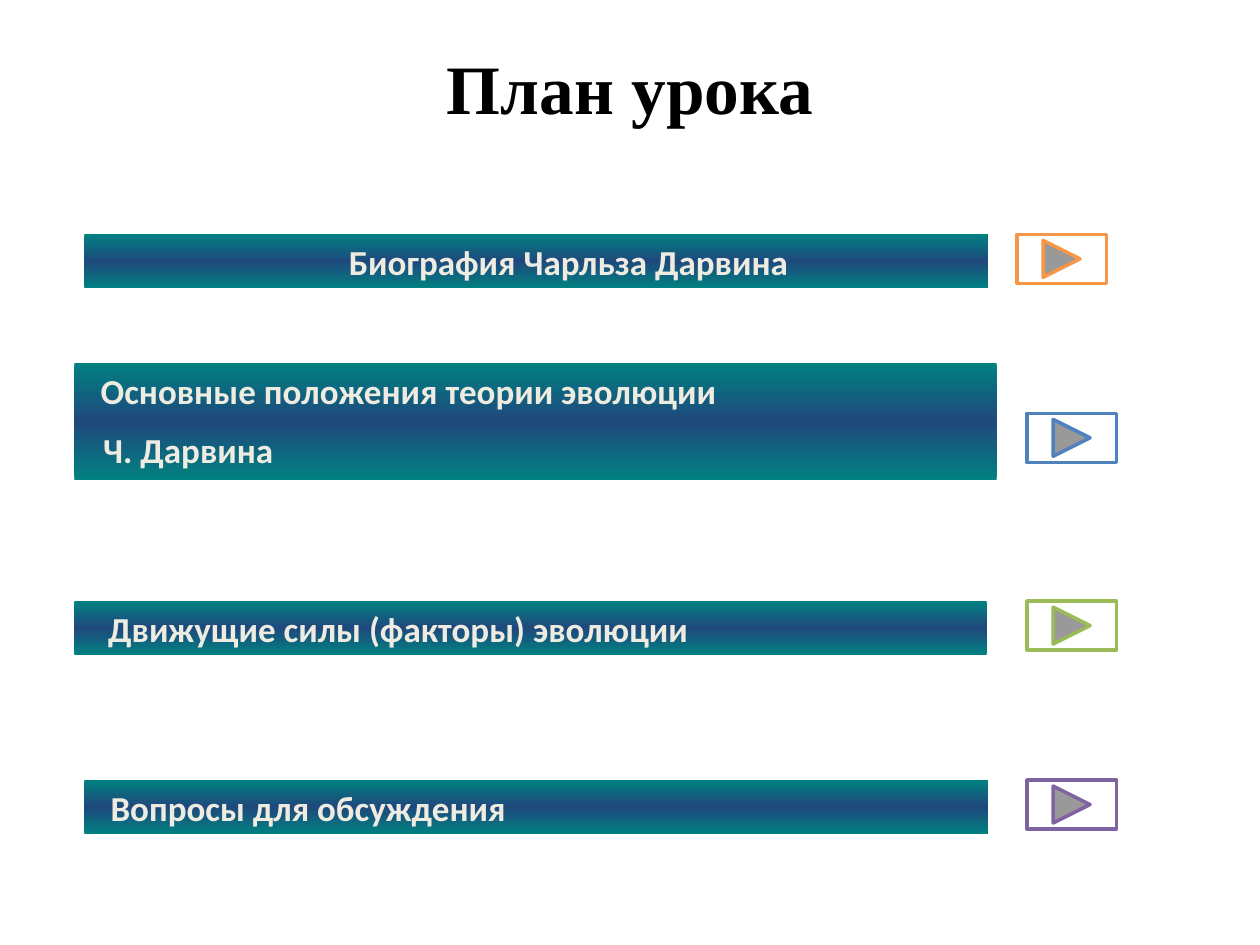
import copy
from dataclasses import dataclass

import pptx
import pptx.dml.color
import pptx.enum.shapes
import pptx.enum.text
import pptx.util
from pptx.util import Inches

ALIGN = pptx.enum.text.PP_ALIGN
ANCHOR = pptx.enum.text.MSO_ANCHOR
SHAPE = pptx.enum.shapes.MSO_SHAPE


@dataclass(frozen=True)
class Theme:
    title_font: str = "Times New Roman"
    body_font: str = "Calibri"
    title_size: float = 39.6
    body_size: float = 20
    title_color: str = "000000"
    body_color: str = "EEECE1"
    bar_edge: str = "008080"
    bar_middle: str = "1F497D"
    button_fill: str = "FFFFFF"


@dataclass(frozen=True)
class PlanItem:
    lines: tuple[str, ...]
    indents: tuple[float, ...]
    left: float
    top: float
    width: float
    height: float
    button_left: float
    button_top: float
    button_color: str


THEME = Theme()
BUTTON_WIDTH, BUTTON_HEIGHT = 0.71, 0.39

PLAN = (
    PlanItem(("Биография Чарльза Дарвина",), (2,),
             0.67, 1.86, 7.17, 0.43, 8.07, 1.86, "F79646"),
    PlanItem(("Основные положения теории эволюции", "Ч. Дарвина"), (0.11, 0.13),
             0.59, 2.88, 7.32, 0.93, 8.15, 3.28, "4F81BD"),
    PlanItem(("Движущие силы (факторы) эволюции",), (0.17,),
             0.59, 4.77, 7.24, 0.43, 8.15, 4.77, "9BBB59"),
    PlanItem(("Вопросы для обсуждения",), (0.11,),
             0.67, 6.19, 7.17, 0.43, 8.15, 6.19, "8064A2"),
)


def rgb(value: str) -> pptx.dml.color.RGBColor:
    return pptx.dml.color.RGBColor.from_string(value)


def write_text(paragraph, text: str, *, font: str, size: float, color: str,
               align=ALIGN.LEFT, indent: float = 0, space_before: float = 0) -> None:
    """Write one bold paragraph with its format."""
    properties = paragraph._p.get_or_add_pPr()
    properties.set("marL", str(Inches(indent)))
    properties.set("indent", "0")
    paragraph.alignment = align
    paragraph.space_before = pptx.util.Pt(space_before)
    run = paragraph.add_run()
    run.text = text
    run.font.name = font
    run.font.size = pptx.util.Pt(size)
    run.font.bold = True
    run.font.color.rgb = rgb(color)


def fill_bar(shape) -> None:
    """Fill with a vertical gradient: edge, middle, edge."""
    shape.fill.gradient()
    shape.fill.gradient_angle = 270
    stop_list = shape.fill._fill._gradFill.gsLst
    stop_list.append(copy.deepcopy(stop_list[-1]))
    colors = (THEME.bar_edge, THEME.bar_middle, THEME.bar_edge)
    for stop, color, position in zip(shape.fill.gradient_stops, colors, (0, 0.5, 1)):
        stop.color.rgb = rgb(color)
        stop.position = position


def add_bar(slide, item: PlanItem) -> None:
    shape = slide.shapes.add_shape(
        SHAPE.RECTANGLE, Inches(item.left), Inches(item.top),
        Inches(item.width), Inches(item.height))
    shape.shadow.inherit = False
    shape.line.fill.background()
    fill_bar(shape)
    frame = shape.text_frame
    frame.word_wrap = True
    frame.auto_size = pptx.enum.text.MSO_AUTO_SIZE.SHAPE_TO_FIT_TEXT
    frame.vertical_anchor = ANCHOR.TOP
    for index, (line, indent) in enumerate(zip(item.lines, item.indents)):
        paragraph = frame.add_paragraph() if index else frame.paragraphs[0]
        write_text(paragraph, line, font=THEME.body_font, size=THEME.body_size,
                   color=THEME.body_color, indent=indent,
                   space_before=THEME.body_size / 2 if index else 0)


def add_button(slide, item: PlanItem) -> None:
    shape = slide.shapes.add_shape(
        SHAPE.ACTION_BUTTON_FORWARD_OR_NEXT, Inches(item.button_left),
        Inches(item.button_top), Inches(BUTTON_WIDTH), Inches(BUTTON_HEIGHT))
    shape.shadow.inherit = False
    shape.fill.solid()
    shape.fill.fore_color.rgb = rgb(THEME.button_fill)
    shape.line.color.rgb = rgb(item.button_color)
    shape.line.width = pptx.util.Pt(2)


def add_title(slide, text: str) -> None:
    title = slide.shapes.title
    title.left, title.top = Inches(0.5), Inches(0.3)
    title.width, title.height = Inches(9), Inches(0.77)
    title.text_frame.vertical_anchor = ANCHOR.MIDDLE
    write_text(title.text_frame.paragraphs[0], text, font=THEME.title_font,
               size=THEME.title_size, color=THEME.title_color, align=ALIGN.CENTER)


def main() -> None:
    presentation = pptx.Presentation()
    presentation.slide_width, presentation.slide_height = Inches(10), Inches(7.5)
    slide = presentation.slides.add_slide(presentation.slide_layouts[5])

    # Title
    add_title(slide, "План урока")

    # Lesson steps
    for item in PLAN:
        add_bar(slide, item)

    # Navigation buttons
    for item in PLAN:
        add_button(slide, item)

    presentation.save("out.pptx")


if __name__ == "__main__":
    main()
